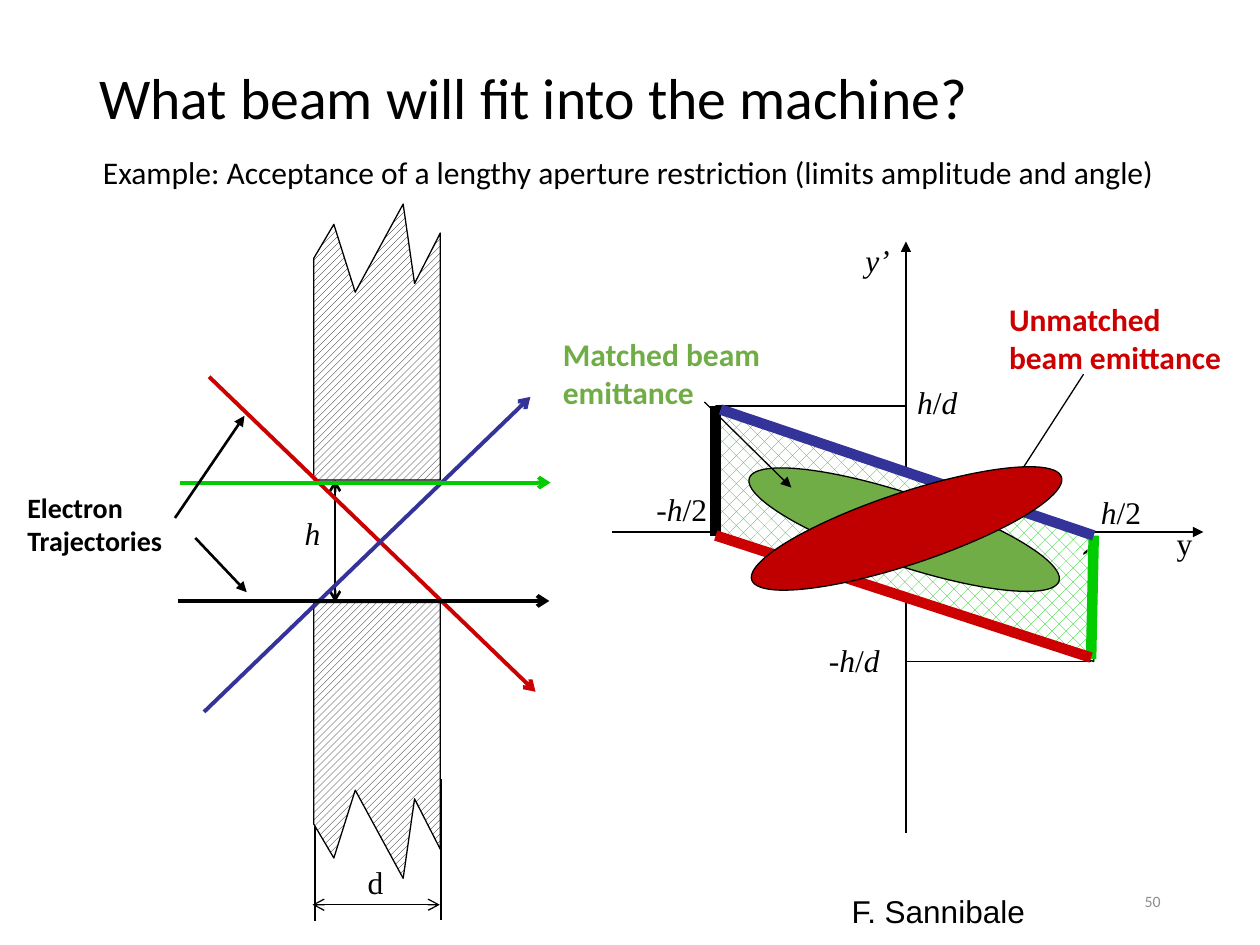
import dataclasses

import lxml.etree
import pptx
import pptx.dml.color
import pptx.enum.dml
import pptx.enum.shapes
import pptx.enum.text
import pptx.oxml.ns
import pptx.util

Pt = pptx.util.Pt
Align = pptx.enum.text.PP_ALIGN
Anchor = pptx.enum.text.MSO_ANCHOR
Fit = pptx.enum.text.MSO_AUTO_SIZE
Pattern = pptx.enum.dml.MSO_PATTERN

COLORS = {
    "black": "000000", "white": "FFFFFF", "red": "CC0000", "blue": "333399",
    "green": "00CC00", "leaf": "70AD47", "crimson": "C00000", "gray": "8C8C8C",
}
SERIF = "Times New Roman"
SANS = "Calibri"


@dataclasses.dataclass
class Line:
    start: tuple
    end: tuple
    color: str = "black"
    width: float = 0.75
    head: str = ""
    tail: str = ""


@dataclasses.dataclass
class Label:
    text: str
    box: tuple
    font: str = SANS
    size: float = 18
    color: str = "black"
    bold: bool = False
    wrap: bool = True
    align: Align = Align.LEFT
    anchor: Anchor = Anchor.TOP
    turn: float = 0


@dataclasses.dataclass
class Area:
    points: list
    pattern: Pattern
    color: str


@dataclasses.dataclass
class Beam:
    left: float
    top: float
    turn: float
    color: str


def rgb(name: str) -> pptx.dml.color.RGBColor:
    return pptx.dml.color.RGBColor.from_string(COLORS[name])


def outline(shape) -> None:
    shape.shadow.inherit = False
    shape.line.color.rgb = rgb("black")
    shape.line.width = Pt(0.75)


def draw_line(shapes, line: Line) -> None:
    ends = [Pt(v) for v in (*line.start, *line.end)]
    shape = shapes.add_connector(pptx.enum.shapes.MSO_CONNECTOR.STRAIGHT, *ends)
    shape.line.color.rgb = rgb(line.color)
    shape.line.width = Pt(line.width)
    stroke = shape.line._get_or_add_ln()
    for tag, kind in (("a:headEnd", line.head), ("a:tailEnd", line.tail)):
        if kind:
            lxml.etree.SubElement(stroke, pptx.oxml.ns.qn(tag), type=kind)
    lxml.etree.SubElement(shape._element.spPr, pptx.oxml.ns.qn("a:effectLst"))


def draw_area(shapes, area: Area) -> None:
    first, *rest = [(Pt(x), Pt(y)) for x, y in area.points]
    path = shapes.build_freeform(*first)
    path.add_line_segments(rest, close=True)
    shape = path.convert_to_shape()
    outline(shape)
    shape.fill.patterned()
    shape.fill.pattern = area.pattern
    shape.fill.fore_color.rgb = rgb(area.color)
    shape.fill.back_color.rgb = rgb("white")


def draw_beam(shapes, beam: Beam) -> None:
    shape = shapes.add_shape(pptx.enum.shapes.MSO_SHAPE.OVAL, Pt(beam.left),
                             Pt(beam.top), Pt(186.5), Pt(41))
    shape.rotation = beam.turn
    outline(shape)
    shape.fill.solid()
    shape.fill.fore_color.rgb = rgb(beam.color)


def draw_label(shapes, label: Label) -> None:
    shape = shapes.add_textbox(*[Pt(v) for v in label.box])
    shape.rotation = label.turn
    frame = shape.text_frame
    frame.word_wrap = label.wrap
    frame.auto_size = Fit.NONE
    frame.vertical_anchor = label.anchor
    for index, text in enumerate(label.text.split("\n")):
        para = frame.add_paragraph() if index else frame.paragraphs[0]
        para.alignment = label.align
        para.font.name = label.font
        para.font.size = Pt(label.size)
        para.font.bold = label.bold
        para.font.color.rgb = rgb(label.color)
        for place, part in enumerate(text.split("*")):
            if part:
                run = para.add_run()
                run.text = part
                if place % 2:
                    run.font.italic = True


def draw_title(slide) -> None:
    title = slide.shapes.title
    title.left, title.top, title.width, title.height = Pt(49.5), Pt(29), Pt(621), Pt(57.5)
    frame = title.text_frame
    frame.text = "What beam will fit into the machine?"
    frame.auto_size = Fit.NONE
    frame.vertical_anchor = Anchor.MIDDLE
    para = frame.paragraphs[0]
    para.alignment = Align.LEFT
    para.line_spacing = 0.9
    para.font.name = SANS
    para.font.size = Pt(33)
    para.font.color.rgb = rgb("black")


def math_label(text: str, left: float, top: float, width: float) -> Label:
    return Label(text, (left, top, width, 33.8), SERIF, wrap=False)


UPPER = [(179.3, 274.3), (251.6, 274.3), (251.6, 133.2), (236.9, 162), (230.4, 116.6),
         (203, 167), (190.8, 128.2), (179.3, 147.6)]
LOWER = [(x, 618.5 - y) for x, y in UPPER]
ZONE = [(409, 304.5), (625, 378), (624.3, 304), (409, 232)]

PARTS = [
    Line((517.7, 476), (517.7, 138), tail="triangle"),
    Line((350, 304), (687.6, 304), tail="triangle"),
    Area(ZONE, Pattern.PERCENT_25, "green"),
    Line((517.7, 232), (409, 232)),
    Line((623.5, 378), (517.7, 378)),
    Line((180, 445.7), (180, 526.3)),
    Line((252, 445), (252, 525.6)),
    Area(UPPER, Pattern.WIDE_UPWARD_DIAGONAL, "black"),
    Area(LOWER, Pattern.WIDE_UPWARD_DIAGONAL, "black"),
    Line((191.5, 274.3), (191.5, 344.2), "black", 1.5, "arrow", "arrow"),
    Line((251.3, 517), (178.6, 517), head="arrow", tail="arrow"),
    Line((119.5, 215.3), (306, 395.3), "red", 2.25, tail="arrow"),
    Line((116.6, 406.8), (303.1, 226.8), "blue", 2.25, tail="arrow"),
    Line((103, 275.8), (314.6, 275.8), "green", 2.25, tail="arrow"),
    Line((101.5, 343.4), (313.9, 343.4), "black", 2.25, tail="arrow"),
    Line((100, 296), (139.7, 237.6), "black", 1.5, tail="triangle"),
    Line((111.6, 307.4), (141, 338.4), "black", 1.5, tail="triangle"),
    Line((619.2, 213.8), (577.4, 278.6), tail="triangle"),
    Beam(423.4, 282.2, 18.4, "leaf"),
    Line((402.5, 229.7), (452.2, 278.6), tail="triangle"),
    Label("`", (589, 340.6, 70.6, 1.4), turn=90),
    Line((625, 306), (623.5, 376.6), "green", 6),
    Line((409, 232), (409, 306), "black", 6),
    Line((411.8, 234), (625, 306), "blue", 6),
    Line((409, 306), (623.5, 375.8), "red", 6),
    Beam(424.8, 281.5, -18.4, "crimson"),
    math_label("y", 665.3, 296, 25.2),
    math_label("*y’*", 487.4, 134, 31.7),
    math_label("-*h*/2", 368, 276.5, 49.7),
    math_label("*h*/*d*", 517, 215.3, 42.5),
    math_label("-*h*/*d*", 466.6, 363, 49.7),
    math_label("*h*/2", 622, 278, 37.4),
    math_label("*h*", 167, 290.2, 25.2),
    math_label("d", 203, 489.6, 25.2),
    Label("Electron\nTrajectories", (8.6, 276.5, 105.8, 46), size=16, bold=True, wrap=False),
    Label("Matched beam emittance", (314.6, 188, 159.8, 50.4), color="leaf", bold=True),
    Label("Unmatched beam emittance", (569.5, 167.8, 145.4, 50.4), color="red", bold=True),
    Label("Example: Acceptance of a lengthy aperture restriction (limits amplitude and angle)",
          (51.8, 84.2, 651, 28.8)),
    Label("F. Sannibale", (479.5, 506.2, 133.2, 27.4), "Arial"),
    Label("50", (508.3, 500.4, 162, 28.8), size=9, color="gray",
          align=Align.RIGHT, anchor=Anchor.MIDDLE),
]
DRAW = {Line: draw_line, Area: draw_area, Beam: draw_beam, Label: draw_label}


def main() -> None:
    deck = pptx.Presentation()
    deck.slide_width, deck.slide_height = Pt(720), Pt(540)
    slide = deck.slides.add_slide(deck.slide_layouts[5])
    draw_title(slide)
    for part in PARTS:
        DRAW[type(part)](slide.shapes, part)
    deck.save("out.pptx")


if __name__ == "__main__":
    main()
